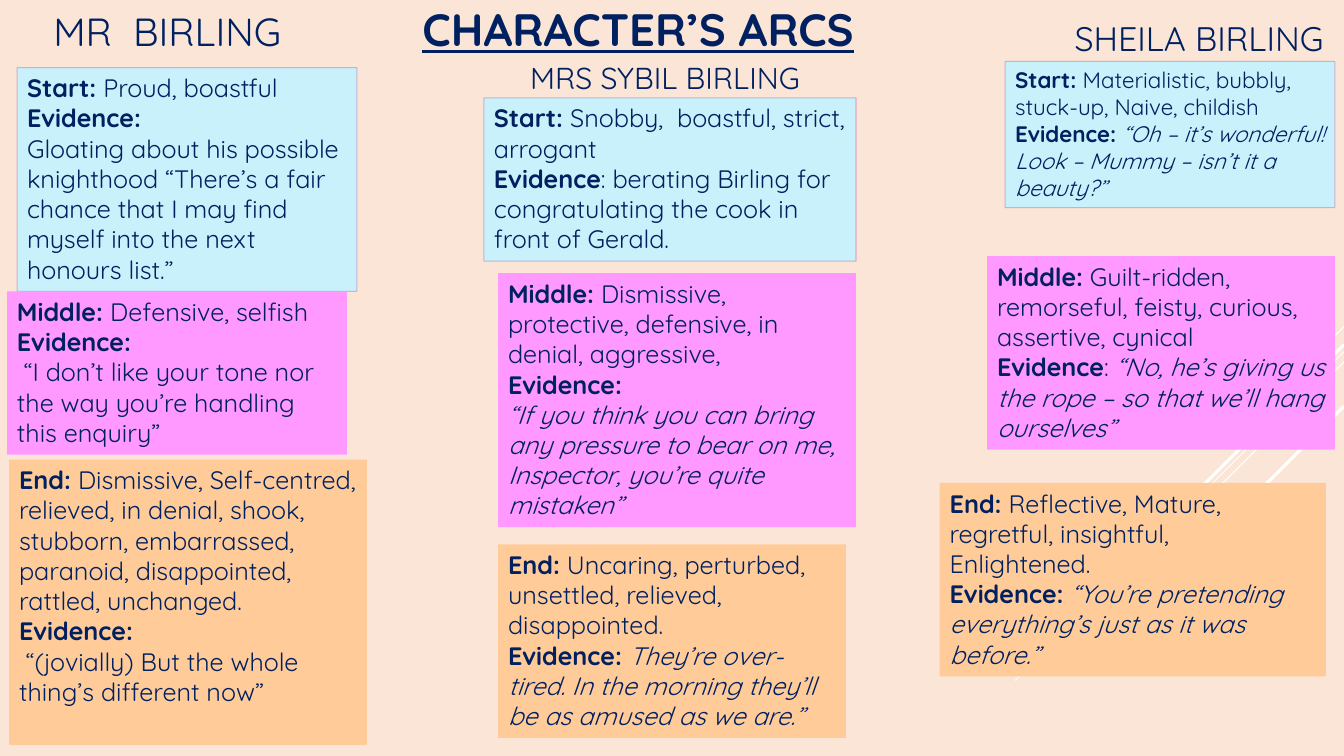
from pptx import Presentation
from pptx import util as u
from pptx.dml.color import RGBColor
from pptx.enum import shapes, text
from pptx.oxml.ns import qn
from lxml import etree

WIDE, HIGH = 13.33, 7.5


def tint(code):
    return RGBColor.from_string(code)


class Board:
    font = "Quicksand"
    navy = "002060"
    fills = {"start": "C8F1FB", "middle": "FF99FF", "end": "FFCC99"}

    def __init__(self, deck):
        self.slide = deck.slides.add_slide(deck.slide_layouts[5])
        fill = self.slide.background.fill
        fill.solid()
        fill.fore_color.rgb = tint("FAE5D7")

    def style(self, run, size, bold=False, italic=False):
        font = run.font
        font.name, font.size = self.font, u.Pt(size)
        font.bold, font.italic = bold, italic
        font.color.rgb = tint(self.navy)

    def frame(self, shape, anchor):
        body = shape.text_frame
        body.word_wrap = True
        body.auto_size = text.MSO_AUTO_SIZE.NONE
        body.vertical_anchor = anchor
        return body

    def title(self, words, x, y, w, h):
        shape = self.slide.shapes.title
        shape.left, shape.top = u.Inches(x), u.Inches(y)
        shape.width, shape.height = u.Inches(w), u.Inches(h)
        body = self.frame(shape, text.MSO_ANCHOR.MIDDLE)
        body.text = words
        para = body.paragraphs[0]
        para.alignment = text.PP_ALIGN.LEFT
        self.style(para.runs[0], 32.4, bold=True)
        para.runs[0].font.underline = True

    def head(self, words, size, x, y, w, h):
        shape = self.slide.shapes.add_textbox(*map(u.Inches, (x, y, w, h)))
        body = self.frame(shape, text.MSO_ANCHOR.MIDDLE)
        body.text = words
        body.paragraphs[0].line_spacing = 0.8
        self.style(body.paragraphs[0].runs[0], size)

    def streak(self, top, span, width):
        ends = (WIDE, top, WIDE - span, top + span)
        line = self.slide.shapes.add_connector(
            shapes.MSO_CONNECTOR.STRAIGHT, *map(u.Inches, ends))
        line.line.color.rgb = tint("FFFFFF")
        line.line.width = u.Pt(width)
        etree.SubElement(line._element.spPr, qn("a:effectLst"))

    def card(self, stage, spot, paras, size=18):
        shape = self.slide.shapes.add_shape(
            shapes.MSO_SHAPE.RECTANGLE, *map(u.Inches, spot))
        shape.shadow.inherit = False
        shape.fill.solid()
        shape.fill.fore_color.rgb = tint(self.fills[stage])
        if stage == "start":
            shape.line.color.rgb = tint("C089BD")
            shape.line.width = u.Pt(0.75)
            hue = shape.line._ln.find(".//" + qn("a:srgbClr"))
            etree.SubElement(hue, qn("a:alpha"), val="60000")
        else:
            shape.line.fill.background()
        body = self.frame(shape, text.MSO_ANCHOR.TOP)
        for i, parts in enumerate(paras):
            para = body.add_paragraph() if i else body.paragraphs[0]
            para.alignment = text.PP_ALIGN.LEFT
            for k, words in enumerate(parts):
                if words:
                    run = para.add_run()
                    run.text = words
                    self.style(run, size, bold=k == 0, italic=k == 2)


STREAKS = [(3.24, 1, 0.75), (3.49, 3.26, 0.75), (3.59, 2.07, 0.75),
           (3.42, 1.91, 2.25), (4.03, 1.39, 2.25)]

HEADS = [("MR  BIRLING", 28, 0.43, 0.03, 2.88, 0.63),
         ("MRS SYBIL BIRLING", 21.6, 5.16, 0.49, 2.88, 0.63),
         ("SHEILA BIRLING", 24.3, 10.56, 0.1, 2.69, 0.63)]

CARDS = [
    ("start", (0.17, 0.67, 3.37, 2.22), [
        ("Start: ", "Proud, boastful"),
        ("Evidence:",),
        ("", "Gloating about his possible knighthood “There’s a fair chance "
         "that I may find myself into the next honours list.”")]),
    ("middle", (0.07, 2.89, 3.37, 1.62), [
        ("Middle: ", "Defensive, selfish"),
        ("Evidence:",),
        ("", " “I don’t like your tone nor the way you’re handling this enquiry”")]),
    ("end", (0.09, 4.56, 3.55, 2.83), [
        ("End: ", "Dismissive, Self-centred, relieved, in denial, shook, stubborn, "
         "embarrassed, paranoid, disappointed, rattled, unchanged."),
        ("Evidence:",),
        ("", " “(jovially) But the whole thing’s different now”")]),
    ("start", (4.8, 0.97, 3.69, 1.62), [
        ("Start: ", "Snobby,  boastful, strict, arrogant"),
        ("Evidence", ": berating Birling for congratulating the cook in front of Gerald.")]),
    ("middle", (4.94, 2.71, 3.55, 2.52), [
        ("Middle: ", "Dismissive, protective, defensive, in denial, aggressive,"),
        ("Evidence:",),
        ("", "", "“If you think you can bring any pressure to bear on me, "
         "Inspector, you’re quite mistaken”")]),
    ("end", (4.94, 5.4, 3.45, 1.92), [
        ("End:", " Uncaring, perturbed, unsettled, relieved, disappointed."),
        ("Evidence: ", "", "They’re over-tired. In the morning they’ll be as "
         "amused as we are.”")]),
    ("start", (9.97, 0.61, 3.27, 1.45), [
        ("Start: ", "Materialistic, bubbly, stuck-up, Naive, childish"),
        ("Evidence: ", "", "“Oh – it’s wonderful! Look – Mummy – isn’t it a beauty?”")], 16),
    ("middle", (9.79, 2.54, 3.45, 1.92), [
        ("Middle:", " Guilt-ridden, remorseful, feisty, curious, assertive, cynical"),
        ("Evidence", ": ", "“No, he’s giving us the rope – so that we’ll hang ourselves”")]),
    ("end", (9.32, 4.79, 3.83, 1.92), [
        ("End: ", "Reflective, Mature, regretful, insightful, Enlightened."),
        ("Evidence: ", "", "“You’re pretending everything’s just as it was before.”")]),
]


def main():
    deck = Presentation()
    deck.slide_width, deck.slide_height = u.Inches(WIDE), u.Inches(HIGH)
    board = Board(deck)
    board.title("CHARACTER’S ARCS", 4.09, 0.03, 5.02, 0.51)
    for streak in STREAKS:
        board.streak(*streak)
    for head in HEADS:
        board.head(*head)
    for card in CARDS:
        board.card(*card)
    deck.save("out.pptx")


if __name__ == "__main__":
    main()
